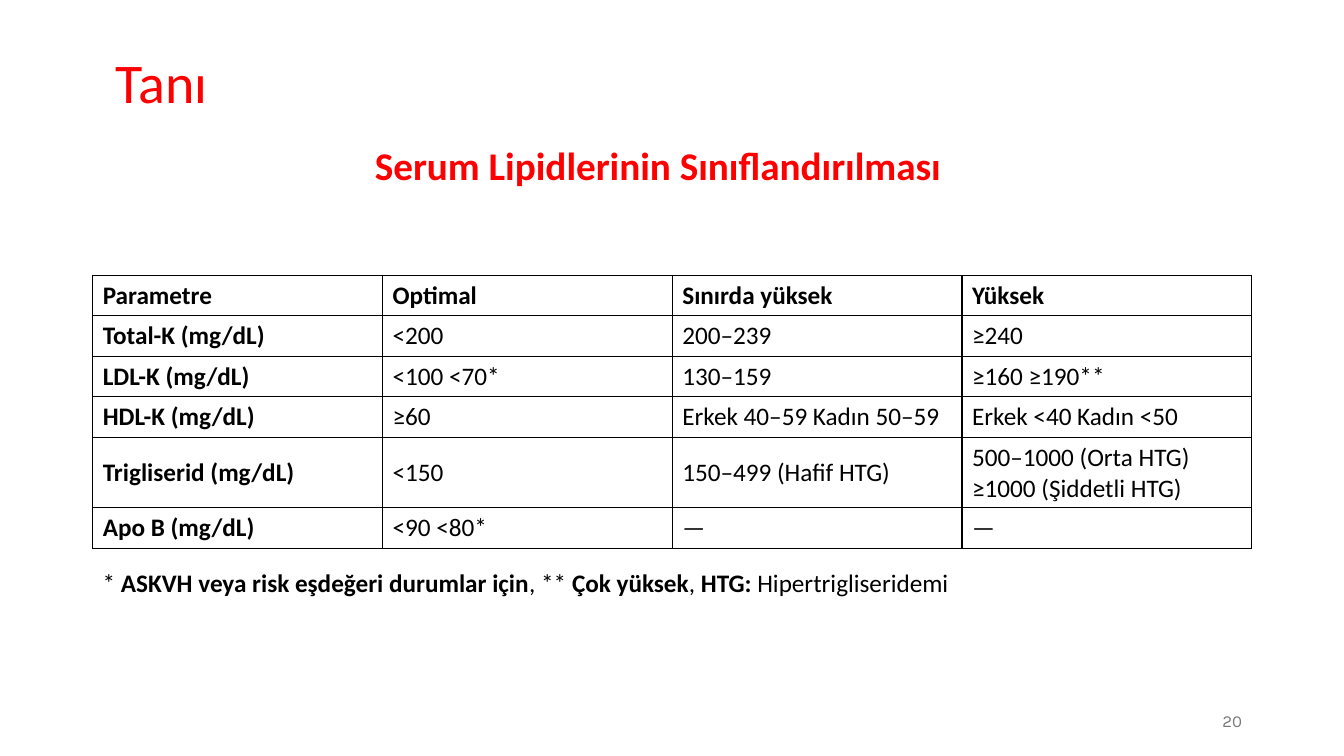
from lxml.etree import SubElement
from pptx import Presentation
from pptx.dml.color import RGBColor
from pptx.enum.text import MSO_ANCHOR, PP_ALIGN
from pptx.oxml.ns import qn
from pptx.util import Inches, Pt

WIDE, HIGH = Inches(13.33), Inches(7.5)
RED, BLACK, GREY = "FF0000", "000000", "797979"
LEFT, SPAN = 6.9, 86.25
ROW, TALL = 5.36, 9.33
ROWS = [
    ["Parametre", "Optimal", "Sınırda yüksek", "Yüksek"],
    ["Total-K (mg/dL)", "<200", "200–239", "≥240"],
    ["LDL-K (mg/dL)", "<100 <70*", "130–159", "≥160 ≥190**"],
    ["HDL-K (mg/dL)", "≥60", "Erkek 40–59 Kadın 50–59", "Erkek <40 Kadın <50"],
    ["Trigliserid (mg/dL)", "<150", "150–499 (Hafif HTG)",
     "500–1000 (Orta HTG) ≥1000 (Şiddetli HTG)"],
    ["Apo B (mg/dL)", "<90 <80*", "—", "—"],
]
NOTE = [
    ("* ", False), ("ASKVH veya risk eşdeğeri durumlar için", True),
    (", ** ", False), ("Çok yüksek", True), (", ", False),
    ("HTG: ", True), ("Hipertrigliseridemi", False),
]


def paint(code):
    """Turn a hex string into a colour."""
    return RGBColor.from_string(code)


def across(share):
    """Turn a percentage of the slide width into a length."""
    return round(WIDE * share / 100)


def down(share):
    """Turn a percentage of the slide height into a length."""
    return round(HIGH * share / 100)


def write(para, runs, size, color=BLACK, face="Calibri"):
    """Add (text, bold) runs to a paragraph."""
    for text, bold in runs:
        run = para.add_run()
        run.text = text
        font = run.font
        font.name, font.size, font.bold = face, Pt(size), bold
        font.color.rgb = paint(color)


def label(slide, area, runs, size, color=BLACK, face="Calibri",
          anchor=MSO_ANCHOR.TOP, align=PP_ALIGN.LEFT, lead=1.0):
    """Add a text box whose area is given in slide percentages."""
    left, top, width, height = area
    box = slide.shapes.add_textbox(across(left), down(top), across(width), down(height))
    frame = box.text_frame
    frame.word_wrap = True
    frame.vertical_anchor = anchor
    para = frame.paragraphs[0]
    para.alignment, para.line_spacing = align, lead
    write(para, runs, size, color, face)


def border(cell, color=BLACK):
    """Draw a one-point line on every side of a cell."""
    props = cell._tc.get_or_add_tcPr()
    for index, side in enumerate(("lnL", "lnR", "lnT", "lnB")):
        line = props.makeelement(qn(f"a:{side}"), {"w": str(Pt(1))})
        fill = SubElement(line, qn("a:solidFill"))
        SubElement(fill, qn("a:srgbClr"), val=color)
        props.insert(index, line)


def grid(slide, top, rows):
    """Add a table with bold headings in its first row and column."""
    count = len(rows[0])
    heights = [TALL if row[0].startswith("Trig") else ROW for row in rows]
    shape = slide.shapes.add_table(len(rows), count, across(LEFT), down(top),
                                   across(SPAN), down(sum(heights)))
    table = shape.table
    table.first_row = table.horz_banding = False
    for column in table.columns:
        column.width = across(SPAN / count)
    for r, (row, height) in enumerate(zip(rows, heights)):
        table.rows[r].height = down(height)
        for c, text in enumerate(row):
            cell = table.cell(r, c)
            cell.vertical_anchor = MSO_ANCHOR.MIDDLE
            cell.fill.background()
            border(cell)
            write(cell.text_frame.paragraphs[0], [(text, r == 0 or c == 0)], 18)


def main():
    """Build and save the slide."""
    deck = Presentation()
    deck.slide_width, deck.slide_height = WIDE, HIGH
    slide = deck.slides.add_slide(deck.slide_layouts[6])
    label(slide, (7.87, 3.2, 84.25, 16.27), [("Tanı", False)], 40, RED,
          anchor=MSO_ANCHOR.MIDDLE, lead=0.9)
    label(slide, (70.65, 92.67, 22.5, 5.33), [("20", False)], 12, GREY, "Karla",
          anchor=MSO_ANCHOR.MIDDLE, align=PP_ALIGN.RIGHT)
    label(slide, (27.15, 18, 45.75, 7.6),
          [("Serum Lipidlerinin Sınıflandırılması", True)], 28, RED)
    grid(slide, 36.4, ROWS)
    label(slide, (LEFT, 74.4, SPAN, 5.33), NOTE, 18)
    deck.save("out.pptx")


if __name__ == "__main__":
    main()
